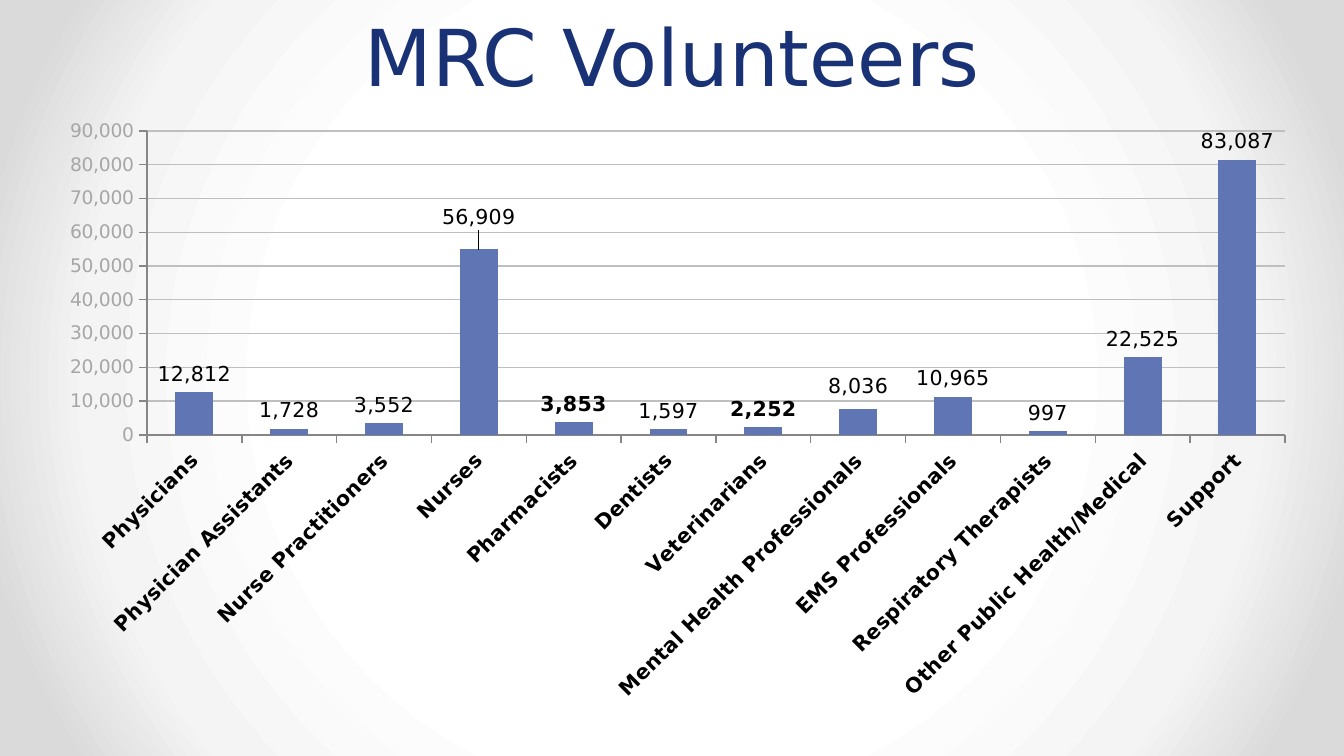
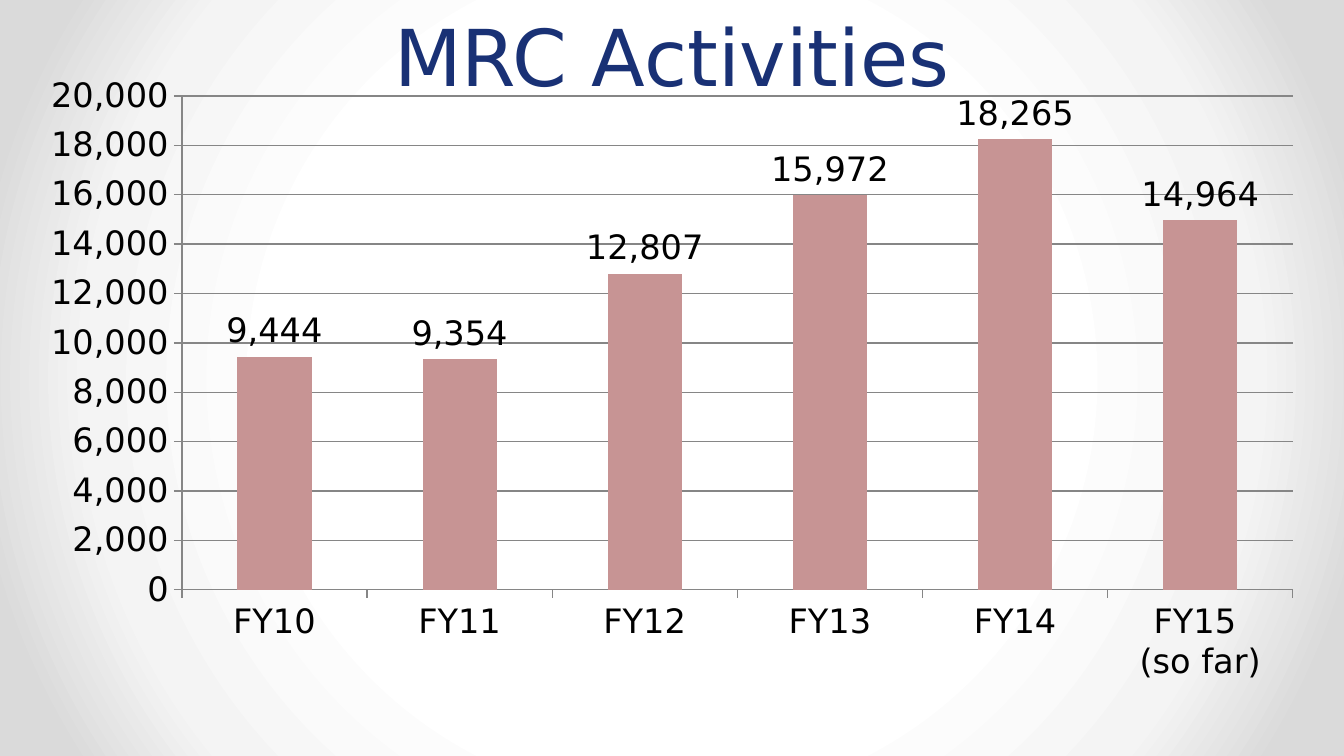
from dataclasses import dataclass

from lxml import etree
from pptx import Presentation
from pptx.chart.data import CategoryChartData
from pptx.dml.color import RGBColor
from pptx.enum.chart import XL_CHART_TYPE, XL_LABEL_POSITION, XL_TICK_MARK
from pptx.enum.text import MSO_ANCHOR, MSO_AUTO_SIZE, PP_ALIGN
from pptx.oxml.ns import qn
from pptx.util import Pt

COLUMN = XL_CHART_TYPE.COLUMN_CLUSTERED
ABOVE = XL_LABEL_POSITION.OUTSIDE_END
OUT, NONE = XL_TICK_MARK.OUTSIDE, XL_TICK_MARK.NONE
BOTTOM, CENTER = MSO_ANCHOR.BOTTOM, PP_ALIGN.CENTER
NO_FIT = MSO_AUTO_SIZE.NONE

PX = 914400 / 134.4
WIDE, HIGH = 1344, 756
TITLE_BOX = (0, 0, WIDE, 109)
TITLE_ONLY = 5


@dataclass(frozen=True)
class Theme:
    font: str = "DejaVu Sans"
    title: str = "193175"
    title_size: int = 42
    text: str = "000000"
    axis: str = "868686"
    number: str = "#,##0"
    glow: tuple = ((50, "FFFFFF"), (76, "F4F4F4"), (92, "DADADA"))


THEME = Theme()

# Each bar: category, value, and the label shown where it differs from the value.
VOLUNTEERS = [
    ("Physicians", 12655, "12,812"),
    ("Physician Assistants", 1857, "1,728"),
    ("Nurse Practitioners", 3376, "3,552"),
    ("Nurses", 54954, "56,909"),
    ("Pharmacists", 3853, None),
    ("Dentists", 1625, "1,597"),
    ("Veterinarians", 2252, None),
    ("Mental Health Professionals", 7693, "8,036"),
    ("EMS Professionals", 11354, "10,965"),
    ("Respiratory Therapists", 1021, "997"),
    ("Other Public Health/Medical", 23075, "22,525"),
    ("Support", 81436, "83,087"),
]
ACTIVITIES = [
    ("FY10", 9444, None),
    ("FY11", 9354, None),
    ("FY12", 12807, None),
    ("FY13", 15972, None),
    ("FY14", 18265, None),
    ("FY15 \n(so far)", 14964, None),
]

# box and plot are left, top, width, height on the slide; lift raises a label.
SLIDES = [
    dict(title="MRC Volunteers", bars=VOLUNTEERS, fill="6076B4",
         box=(44, 109, 1266, 605), plot=(147, 131, 1138, 304),
         top=90000, step=10000, size=10, label_size=11, bold=True, turn=-45,
         value_color="A6A6A6", grid="BFBFBF", lift={"Nurses": 14, "Mental Health Professionals": 5}),
    dict(title="MRC Activities", bars=ACTIVITIES, fill="C79494",
         box=(26, 65, 1293, 630), plot=(182, 96, 1111, 494),
         top=20000, step=2000, size=18, label_size=18, bold=False, turn=0,
         value_color=THEME.text, grid=THEME.axis, lift={}),
]


def emu(box):
    return [round(n * PX) for n in box]


def style(font, size, color, bold=False):
    font.name, font.size, font.bold = THEME.font, Pt(size), bold
    font.color.rgb = RGBColor.from_string(color)


def stroke(line, color):
    line.color.rgb = RGBColor.from_string(color)
    line.width = Pt(0.75)


def add_glow(master):
    """Give every slide the round white-to-grey background."""
    master.background.fill.gradient()
    grad = next(master.element.iter(qn("a:gradFill")))
    for child in list(grad):
        grad.remove(child)
    stops = etree.SubElement(grad, qn("a:gsLst"))
    for place, color in THEME.glow:
        stop = etree.SubElement(stops, qn("a:gs"), pos=str(place * 1000))
        etree.SubElement(stop, qn("a:srgbClr"), val=color)
    ring = etree.SubElement(grad, qn("a:path"), path="circle")
    etree.SubElement(ring, qn("a:fillToRect"), l="50000", t="50000", r="50000", b="50000")


def add_layout(parent, index, parts):
    layout = etree.Element(qn("c:layout"))
    manual = etree.SubElement(layout, qn("c:manualLayout"))
    for tag, value in parts:
        etree.SubElement(manual, qn("c:" + tag), val=str(value))
    parent.insert(index, layout)


def set_plot(chart, box, plot):
    """Pin the inner plot area, as fractions of the chart."""
    area = next(chart.element.iter(qn("c:plotArea")))
    for old in area.findall(qn("c:layout")):
        area.remove(old)
    left, top, wide, high = box
    add_layout(area, 0, [
        ("layoutTarget", "inner"), ("xMode", "edge"), ("yMode", "edge"),
        ("x", round((plot[0] - left) / wide, 4)), ("y", round((plot[1] - top) / high, 4)),
        ("w", round(plot[2] / wide, 4)), ("h", round(plot[3] / high, 4)),
    ])


def set_axes(chart, page):
    cats, vals = chart.category_axis, chart.value_axis
    for axis in (cats, vals):
        axis.major_tick_mark, axis.minor_tick_mark = OUT, NONE
        stroke(axis.format.line, THEME.axis)
    style(cats.tick_labels.font, page["label_size"], THEME.text, page["bold"])
    if page["turn"]:
        body = next(cats._element.iter(qn("a:bodyPr")))
        body.set("rot", str(page["turn"] * 60000))
        body.set("vert", "horz")
    vals.minimum_scale, vals.maximum_scale = 0, page["top"]
    vals.major_unit = page["step"]
    vals.has_major_gridlines = True
    stroke(vals.major_gridlines.format.line, page["grid"])
    style(vals.tick_labels.font, page["size"], page["value_color"])
    vals.tick_labels.number_format = THEME.number
    vals.tick_labels.number_format_is_linked = False


def set_labels(series, page):
    labels = series.data_labels
    labels.show_value, labels.position = True, ABOVE
    labels.number_format, labels.number_format_is_linked = THEME.number, False
    style(labels.font, page["label_size"], THEME.text, page["bold"])
    for i, (_, _, text) in enumerate(page["bars"]):
        if text:
            label = series.points[i].data_label
            run = label.text_frame.paragraphs[0].add_run()
            run.text = text
            style(run.font, page["label_size"], THEME.text)
            label.position = ABOVE
    names = [bar[0] for bar in page["bars"]]
    for item in series._element.iter(qn("c:dLbl")):
        rise = page["lift"].get(names[int(item.find(qn("c:idx")).get("val"))])
        if rise:
            for old in item.findall(qn("c:layout")):
                item.remove(old)
            add_layout(item, 1, [("x", 0), ("y", round(-rise / page["box"][3], 4))])


def add_title(slide, text):
    title = slide.shapes.title
    title.left, title.top, title.width, title.height = emu(TITLE_BOX)
    frame = title.text_frame
    frame.auto_size, frame.vertical_anchor = NO_FIT, BOTTOM
    para = frame.paragraphs[0]
    para.alignment = CENTER
    run = para.add_run()
    run.text = text
    style(run.font, THEME.title_size, THEME.title)


def add_bars(slide, page):
    data = CategoryChartData(number_format=THEME.number)
    data.categories = [bar[0] for bar in page["bars"]]
    data.add_series("Series 1", [bar[1] for bar in page["bars"]])
    chart = slide.shapes.add_chart(COLUMN, *emu(page["box"]), data).chart
    chart.has_legend = chart.has_title = False
    style(chart.font, page["size"], THEME.text)
    plot = chart.plots[0]
    plot.gap_width, plot.vary_by_categories = 150, False
    series = plot.series[0]
    series.format.fill.solid()
    series.format.fill.fore_color.rgb = RGBColor.from_string(page["fill"])
    set_axes(chart, page)
    set_labels(series, page)
    set_plot(chart, page["box"], page["plot"])


def main():
    prs = Presentation()
    prs.slide_width, prs.slide_height = emu((WIDE, HIGH))
    add_glow(prs.slide_master)
    for page in SLIDES:
        slide = prs.slides.add_slide(prs.slide_layouts[TITLE_ONLY])
        add_title(slide, page["title"])
        add_bars(slide, page)
    prs.save("out.pptx")


if __name__ == "__main__":
    main()
